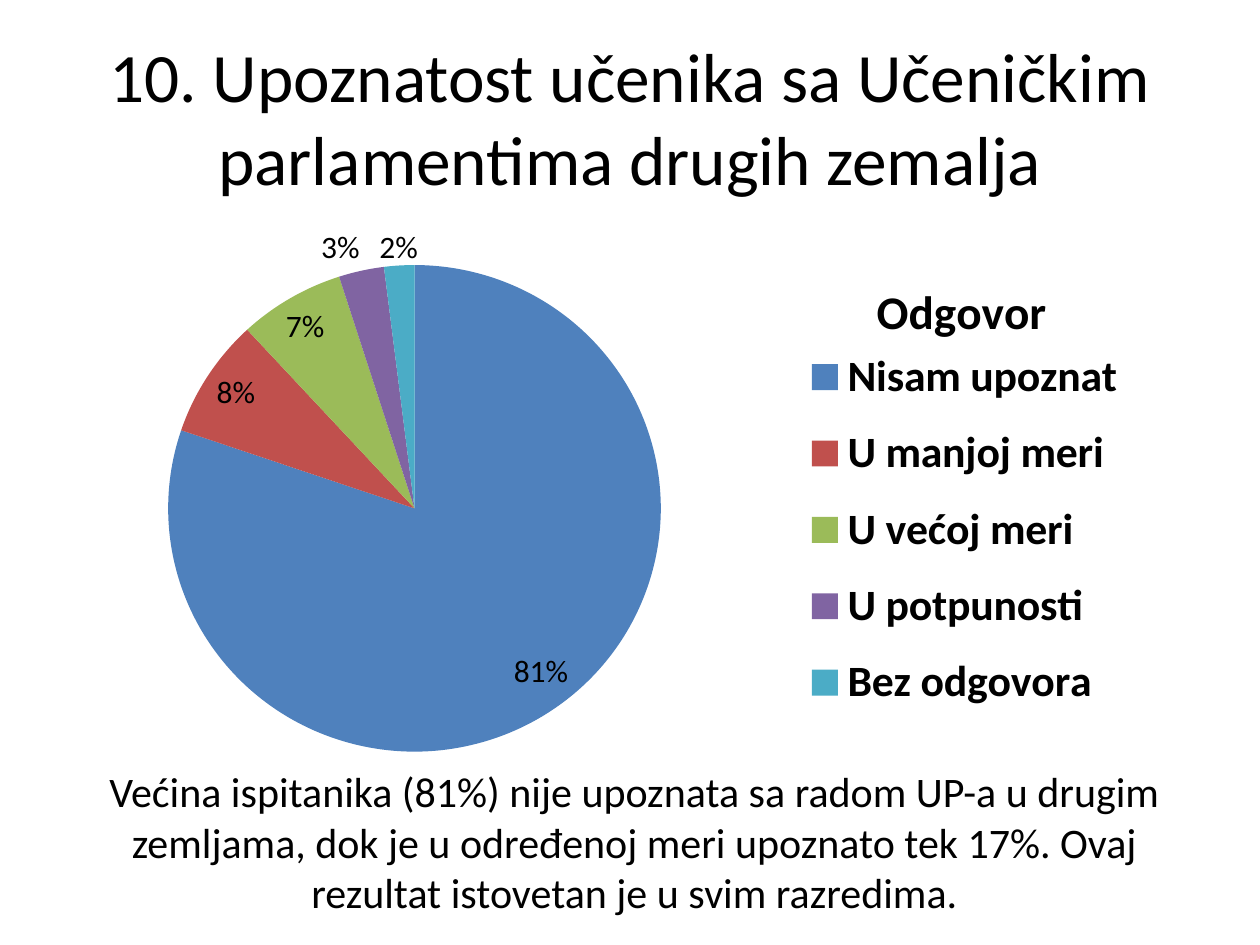
from dataclasses import dataclass

from lxml import etree
from pptx import Presentation
from pptx.chart.data import CategoryChartData
from pptx.dml.color import RGBColor
from pptx.enum.chart import XL_CHART_TYPE, XL_LABEL_POSITION, XL_LEGEND_POSITION
from pptx.enum.text import MSO_ANCHOR, PP_ALIGN
from pptx.oxml.ns import qn
from pptx.util import Pt

PIE = XL_CHART_TYPE.PIE
BEST_FIT = XL_LABEL_POSITION.BEST_FIT
LEGEND_TOP = XL_LEGEND_POSITION.TOP
CENTER = PP_ALIGN.CENTER
TOP, MIDDLE = MSO_ANCHOR.TOP, MSO_ANCHOR.MIDDLE
TITLE_ONLY_LAYOUT = 5

TITLE = "10. Upoznatost učenika sa Učeničkim parlamentima drugih zemalja"
CAPTION = (
    "Većina ispitanika (81%) nije upoznata sa radom UP-a u drugim zemljama, "
    "dok je u određenoj meri upoznato tek 17%. "
    "Ovaj rezultat istovetan je u svim razredima."
)
SERIES_NAME = "Odgovor"
ANSWERS = [
    ("Nisam upoznat", 81, "4F81BD"),
    ("U manjoj meri", 8, "C0504D"),
    ("U većoj meri", 7, "9BBB59"),
    ("U potpunosti", 3, "8064A2"),
    ("Bez odgovora", 2, "4BACC6"),
]

# Left, top, width, height in points
SLIDE_SIZE = (720, 540)
TITLE_BOX = (36, 21.6, 648, 90)
CHART_BOX = (36, 126, 648, 356.4)
CAPTION_BOX = (30.96, 434.16, 663.12, 94.32)

# Fractions of the chart area
PLOT_LAYOUT = {"x": 0.09, "y": 0.06, "w": 0.44, "h": 0.79}
CHART_TITLE_LAYOUT = {"x": 0.71, "y": 0.07}
LEGEND_LAYOUT = {"x": 0.64, "y": 0.16, "w": 0.31, "h": 0.66}


@dataclass(frozen=True)
class Theme:
    font: str = "Calibri"
    text: str = "000000"
    title: float = 39.6
    caption: float = 24
    chart_title: float = 27
    legend: float = 25
    label: float = 18


THEME = Theme()


def style_font(font, size, bold=False):
    font.name = THEME.font
    font.size = Pt(size)
    font.bold = bold
    font.color.rgb = RGBColor.from_string(THEME.text)


def fill_text(text_frame, text, size, anchor):
    text_frame.word_wrap = True
    text_frame.vertical_anchor = anchor
    paragraph = text_frame.paragraphs[0]
    paragraph.alignment = CENTER
    run = paragraph.add_run()
    run.text = text
    style_font(run.font, size)


def set_manual_layout(parent, fractions, after=None, inner=False):
    """Pin a chart part to fractions of the chart area, placed after the named child."""
    for existing in parent.findall(qn("c:layout")):
        parent.remove(existing)
    layout = etree.Element(qn("c:layout"))
    manual = etree.SubElement(layout, qn("c:manualLayout"))
    settings = [("layoutTarget", "inner")] if inner else []
    settings += [("xMode", "edge"), ("yMode", "edge"), *fractions.items()]
    for name, value in settings:
        etree.SubElement(manual, qn(f"c:{name}")).set("val", str(value))
    if after is None:
        parent.insert(0, layout)
    else:
        parent.find(qn(after)).addnext(layout)


def add_answer_chart(slide):
    data = CategoryChartData()
    data.categories = [name for name, _, _ in ANSWERS]
    data.add_series(SERIES_NAME, [value for _, value, _ in ANSWERS])
    chart = slide.shapes.add_chart(PIE, *map(Pt, CHART_BOX), data).chart
    style_font(chart.font, THEME.label)

    chart.has_title = True
    paragraph = chart.chart_title.text_frame.paragraphs[0]
    run = paragraph.add_run()
    run.text = SERIES_NAME
    style_font(run.font, THEME.chart_title, bold=True)

    chart.has_legend = True
    chart.legend.position = LEGEND_TOP
    chart.legend.include_in_layout = False
    style_font(chart.legend.font, THEME.legend, bold=True)

    plot = chart.plots[0]
    plot.vary_by_categories = True
    for index, (_, _, color) in enumerate(ANSWERS):
        fill = plot.series[0].points[index].format.fill
        fill.solid()
        fill.fore_color.rgb = RGBColor.from_string(color)

    plot.has_data_labels = True
    labels = plot.data_labels
    labels.show_value = True
    labels.show_percentage = False
    labels.number_format = '0"%"'
    labels.number_format_is_linked = False
    labels.position = BEST_FIT
    style_font(labels.font, THEME.label)

    chart_element = chart.element.find(qn("c:chart"))
    set_manual_layout(chart_element.find(qn("c:plotArea")), PLOT_LAYOUT, inner=True)
    set_manual_layout(chart_element.find(qn("c:title")), CHART_TITLE_LAYOUT, "c:tx")
    set_manual_layout(chart_element.find(qn("c:legend")), LEGEND_LAYOUT, "c:legendPos")


def main():
    presentation = Presentation()
    presentation.slide_width, presentation.slide_height = map(Pt, SLIDE_SIZE)
    slide = presentation.slides.add_slide(presentation.slide_layouts[TITLE_ONLY_LAYOUT])

    title = slide.shapes.title
    title.left, title.top, title.width, title.height = map(Pt, TITLE_BOX)
    fill_text(title.text_frame, TITLE, THEME.title, MIDDLE)

    add_answer_chart(slide)

    caption = slide.shapes.add_textbox(*map(Pt, CAPTION_BOX))
    fill_text(caption.text_frame, CAPTION, THEME.caption, TOP)

    presentation.save("out.pptx")


if __name__ == "__main__":
    main()
